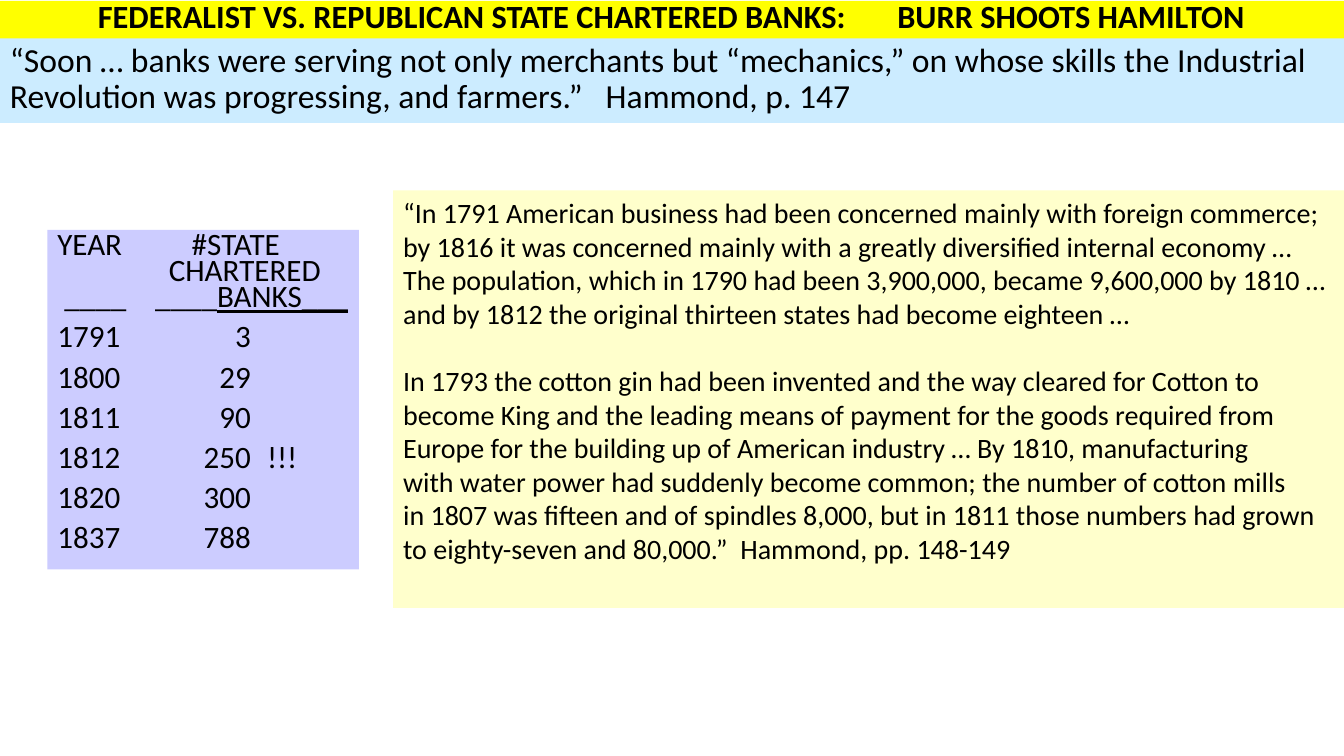
"""Build a slide on the growth of state chartered banks, 1791 to 1837."""
from dataclasses import dataclass

from lxml import etree
from pptx import Presentation
from pptx import util as u
from pptx.dml import color
from pptx.enum import text
from pptx.oxml import ns


@dataclass(frozen=True)
class Theme:
    font: str = "Calibri"
    ink: str = "000000"
    title_fill: str = "FFFF00"
    lead_fill: str = "CCECFF"
    table_fill: str = "CCCCFF"
    quote_fill: str = "FFFFCC"
    title_size: float = 23.1
    lead_size: float = 24
    table_size: float = 22.2
    quote_size: float = 20


theme = Theme()


def place(box, bounds, fill, **frame_format):
    """Position and fill a box, then return its text frame."""
    box.left, box.top, box.width, box.height = map(u.Inches, bounds)
    box.fill.solid()
    box.fill.fore_color.rgb = color.RGBColor.from_string(fill)
    settings = {"word_wrap": True, "auto_size": text.MSO_AUTO_SIZE.NONE,
                "vertical_anchor": text.MSO_ANCHOR.TOP} | frame_format
    for name, value in settings.items():
        setattr(box.text_frame, name, value)
    return box.text_frame


def write(frame, spans, size, tabs=(), bold=False, **para_format):
    """Add a paragraph of (words, underline) spans with (inches, kind) tab stops."""
    first = frame.paragraphs[0]
    para = frame.add_paragraph() if first.runs else first
    if tabs:
        tab_list = etree.SubElement(para._p.get_or_add_pPr(), ns.qn("a:tabLst"))
        for position, kind in tabs:
            etree.SubElement(tab_list, ns.qn("a:tab"), pos=str(u.Inches(position)), algn=kind)
    for name, value in para_format.items():
        setattr(para, name, value)
    for words, underline in spans:
        span = para.add_run()
        span.text = words
        font_format = {"name": theme.font, "size": u.Pt(size), "bold": bold, "underline": underline}
        for name, value in font_format.items():
            setattr(span.font, name, value)
        span.font.color.rgb = color.RGBColor.from_string(theme.ink)


deck = Presentation()
deck.slide_width, deck.slide_height = u.Inches(13.33), u.Inches(7.5)
page = deck.slides.add_slide(deck.slide_layouts[5])

table = place(page.shapes.add_textbox(0, 0, 0, 0), (0.47, 2.28, 3.09, 3.37), theme.table_fill)
header = [
    ([("YEAR\t#STATE", False)], [(1.77, "ctr")]),
    ([("\tCHARTERED", False)], [(1.86, "ctr")]),
    ([("\t____\t____", False), ("BANKS___", True)], [(0.07, "l"), (0.97, "l")]),
]
for spans, tabs in header:
    write(table, spans, theme.table_size, tabs, line_spacing=0.7, space_before=u.Pt(0))
banks = {"1791": "3", "1800": "29", "1811": "90", "1812": "250\t!!!", "1820": "300", "1837": "788"}
for year, count in banks.items():
    write(table, [(f"{year}\t{count}", False)], theme.table_size, [(1.92, "r"), (2.08, "l")],
          line_spacing=0.7, space_before=u.Pt(10))

lead = place(page.shapes.add_textbox(0, 0, 0, 0), (0, 0.38, 13.33, 0.84), theme.lead_fill)
write(lead, [("“Soon … banks were serving not only merchants but “mechanics,” on whose skills "
              "the Industrial Revolution was progressing, and farmers.”\tHammond, p. 147", False)],
      theme.lead_size, [(5.91, "l")], line_spacing=0.9)

quote = place(page.shapes.add_textbox(0, 0, 0, 0), (3.9, 1.89, 9.43, 4.14), theme.quote_fill,
              word_wrap=False)
passages = [
    ["“In 1791 American business had been concerned mainly with foreign commerce;",
     "by 1816 it was concerned mainly with a greatly diversified internal economy …",
     "The population, which in 1790 had been 3,900,000, became 9,600,000 by 1810 …",
     "and by 1812 the original thirteen states had become eighteen …"],
    ["In 1793 the cotton gin had been invented and the way cleared for Cotton to",
     "become King and the leading means of payment for the goods required from",
     "Europe for the building up of American industry … By 1810, manufacturing",
     "with water power had suddenly become common; the number of cotton mills",
     "in 1807 was fifteen and of spindles 8,000, but in 1811 those numbers had grown",
     "to eighty-seven and 80,000.”  Hammond, pp. 148-149"],
]
for passage_index, passage in enumerate(passages):
    for line_index, line in enumerate(passage):
        gap = 24 if passage_index and not line_index else 0
        write(quote, [(line, False)], theme.quote_size, space_before=u.Pt(gap))

title = place(page.shapes.title, (0, 0.01, 13.33, 0.38), theme.title_fill,
              margin_left=u.Inches(0.97), vertical_anchor=text.MSO_ANCHOR.MIDDLE)
write(title, [("FEDERALIST VS. REPUBLICAN STATE CHARTERED BANKS:\tBURR SHOOTS HAMILTON", False)],
      theme.title_size, [(7.93, "l")], bold=True, line_spacing=0.7, alignment=text.PP_ALIGN.LEFT)

deck.save("out.pptx")
